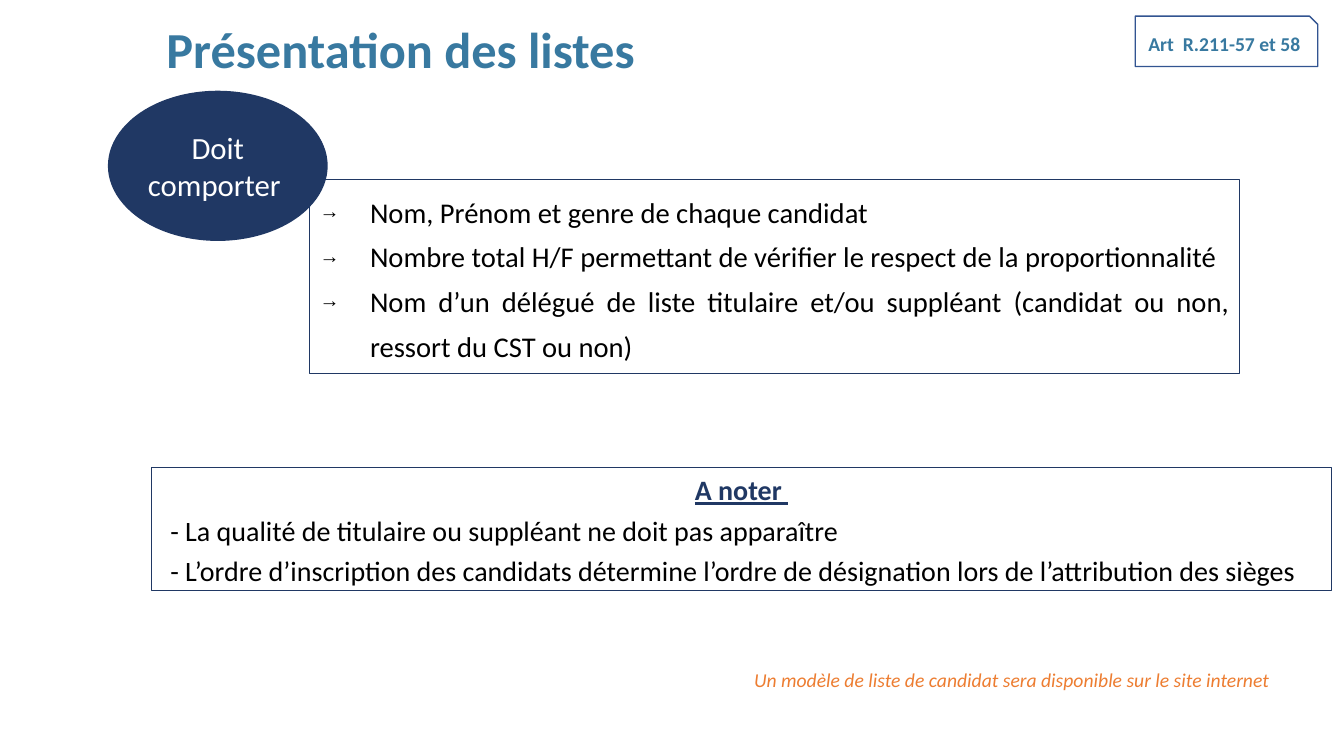
from dataclasses import dataclass

from lxml import etree
from pptx import Presentation
from pptx import util as u
from pptx.dml import color
from pptx.enum import shapes, text
from pptx.oxml import ns

HUES = {"navy": "203864", "teal": "3879A0", "edge": "325491",
        "orange": "ED7D31", "black": "000000", "white": "FFFFFF"}
FONT = "Calibri"
SHAPE, ALIGN, ANCHOR = shapes.MSO_SHAPE, text.PP_ALIGN, text.MSO_ANCHOR


@dataclass
class Para:
    words: str
    size: float
    hue: str
    align: ALIGN = ALIGN.LEFT
    lead: float = 1.0
    bold: bool = False
    slant: bool = False
    under: bool = False
    left: float = 0
    hang: float = 0
    mark: str = ""


@dataclass
class Box:
    at: tuple[float, float, float, float]
    paras: list[Para]
    kind: SHAPE | None = None
    fill: str = ""
    edge: str = ""
    width: float = 0.75
    anchor: ANCHOR = ANCHOR.TOP
    inset: float | None = None


def rgb(hue: str) -> color.RGBColor:
    return color.RGBColor.from_string(HUES[hue])


def indent(para, item: Para) -> None:
    """Set the margin, hanging indent and bullet, which need XML."""
    props = para._p.get_or_add_pPr()
    props.set("marL", str(u.Inches(item.left)))
    props.set("indent", str(u.Inches(-item.hang)))
    if item.mark:
        etree.SubElement(props, ns.qn("a:buSzPct"), val="70000")
        etree.SubElement(props, ns.qn("a:buChar"), char=item.mark)
    else:
        etree.SubElement(props, ns.qn("a:buNone"))


def write(frame, box: Box) -> None:
    frame.word_wrap = True
    frame.auto_size = text.MSO_AUTO_SIZE.NONE
    frame.vertical_anchor = box.anchor
    if box.inset is not None:
        frame.margin_left = frame.margin_right = u.Inches(box.inset)
        frame.margin_top = frame.margin_bottom = u.Inches(box.inset)
    for rank, item in enumerate(box.paras):
        para = frame.add_paragraph() if rank else frame.paragraphs[0]
        indent(para, item)
        para.alignment = item.align
        para.line_spacing = item.lead
        para.space_before = u.Pt(0)
        run = para.add_run()
        run.text = item.words
        font = run.font
        font.name, font.size = FONT, u.Pt(item.size)
        font.bold, font.italic, font.underline = item.bold, item.slant, item.under
        font.color.rgb = rgb(item.hue)


def paint(shape, box: Box) -> None:
    if box.fill:
        shape.fill.solid()
        shape.fill.fore_color.rgb = rgb(box.fill)
    else:
        shape.fill.background()
    if box.edge:
        shape.line.color.rgb = rgb(box.edge)
        shape.line.width = u.Pt(box.width)
    else:
        shape.line.fill.background()


def draw(slide, box: Box, holder=None) -> None:
    """Draw a box, in the given placeholder if there is one."""
    left, top, wide, high = map(u.Inches, box.at)
    if holder is not None:
        shape = holder
        shape.left, shape.top, shape.width, shape.height = left, top, wide, high
    elif box.kind is None:
        shape = slide.shapes.add_textbox(left, top, wide, high)
    else:
        shape = slide.shapes.add_shape(box.kind, left, top, wide, high)
        shape.shadow.inherit = False
    paint(shape, box)
    write(shape.text_frame, box)


TITLE = Box((1.55, 0.11, 6.12, 0.82),
            [Para("Présentation des listes", 36, "teal", lead=0.9, bold=True)],
            anchor=ANCHOR.MIDDLE)

NEEDS = Box((3.07, 1.78, 9.22, 1.93), [
    Para(words, 20.4, "black", ALIGN.JUSTIFY, 1.3, left=0.5, hang=0.5, mark="→")
    for words in (
        "Nom, Prénom et genre de chaque candidat",
        "Nombre total H/F permettant de vérifier le respect de la proportionnalité",
        "Nom d’un délégué de liste titulaire et/ou suppléant "
        "(candidat ou non, ressort du CST ou non)",
    )], edge="navy")

NOTES = [
    Para(words, 20, "black", ALIGN.JUSTIFY, 1.2, left=0.09)
    for words in (
        "- La qualité de titulaire ou suppléant ne doit pas apparaître",
        "- L’ordre d’inscription des candidats détermine l’ordre de "
        "désignation lors de l’attribution des sièges",
    )]

BOXES = [
    Box((11.26, 0.16, 1.81, 0.5),
        [Para("Art  R.211-57 et 58", 14, "teal", ALIGN.CENTER, bold=True)],
        SHAPE.SNIP_1_RECTANGLE, edge="edge", width=1, anchor=ANCHOR.MIDDLE),
    Box((7.38, 6.58, 5.59, 0.34),
        [Para("Un modèle de liste de candidat sera disponible sur le site internet",
              14, "orange", slant=True)]),
    Box((1.5, 4.64, 11.71, 1.22),
        [Para("A noter ", 20, "navy", ALIGN.CENTER, bold=True, under=True), *NOTES],
        SHAPE.RECTANGLE, edge="navy"),
    Box((1.07, 0.9, 2.18, 1.49),
        [Para("Doit comporter ", 22, "white", ALIGN.CENTER)],
        SHAPE.OVAL, fill="navy", anchor=ANCHOR.MIDDLE, inset=0),
]


def main() -> None:
    deck = Presentation()
    deck.slide_width, deck.slide_height = u.Inches(13.33), u.Inches(7.5)
    slide = deck.slides.add_slide(deck.slide_layouts[1])
    draw(slide, TITLE, slide.shapes.title)
    draw(slide, NEEDS, slide.placeholders[1])
    for box in BOXES:
        draw(slide, box)
    deck.save("out.pptx")


if __name__ == "__main__":
    main()
